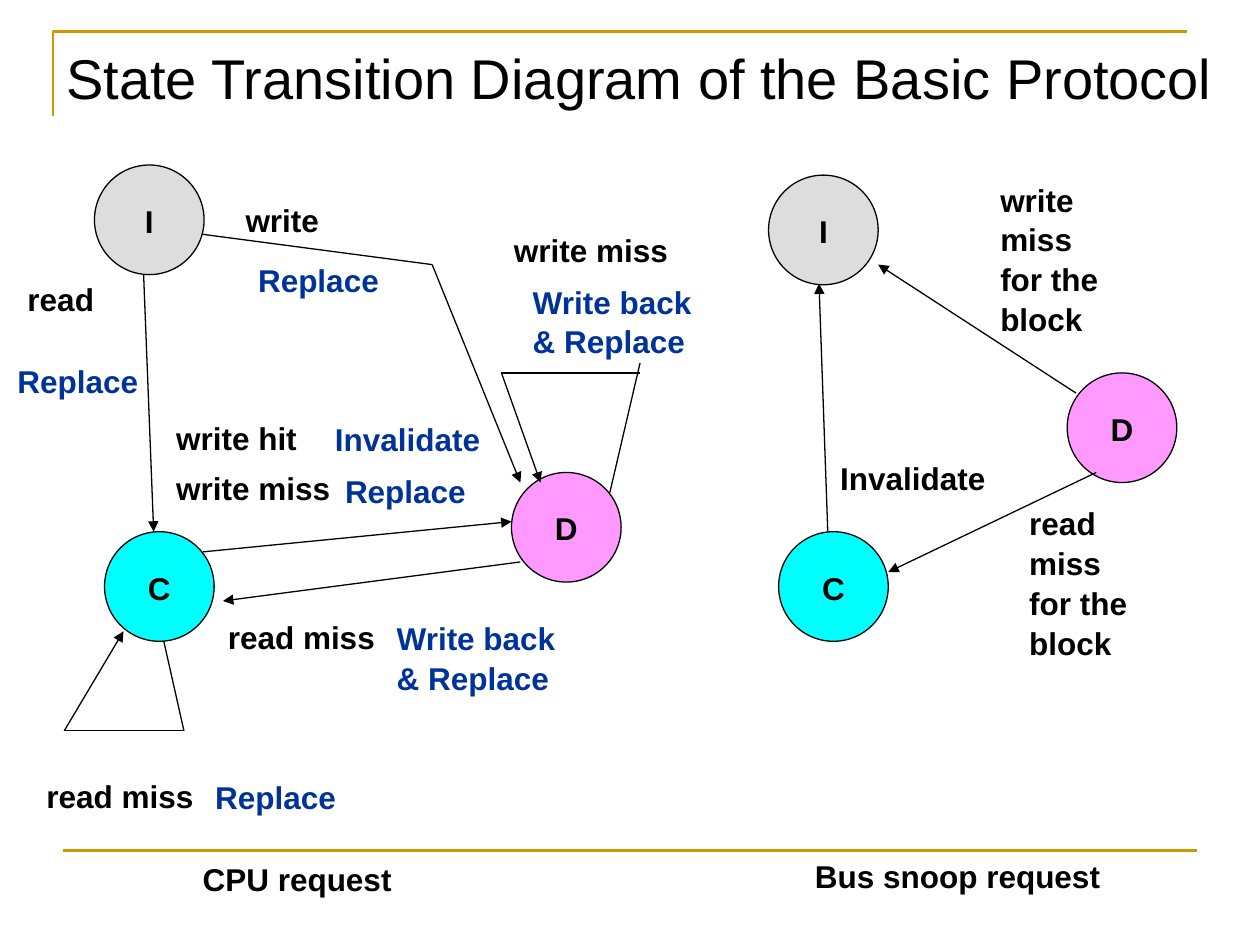
from dataclasses import dataclass
from lxml.etree import SubElement
from pptx import Presentation
from pptx.dml.color import RGBColor
from pptx.enum.shapes import MSO_CONNECTOR, MSO_SHAPE
from pptx.enum.text import MSO_ANCHOR, PP_ALIGN
from pptx.oxml.ns import qn
from pptx.util import Inches, Pt


@dataclass(frozen=True)
class Theme:
    font: str = "Arial"
    ink: str = "000000"
    blue: str = "003399"
    gold: str = "CC9900"
    gray: str = "DDDDDD"
    cyan: str = "00FFFF"
    pink: str = "FF99FF"
    title: int = 32
    body: int = 18
    thin: float = 0.75
    rule: float = 1.5
    pitch: float = 1.05


THEME = Theme()
SIZE = 0.87  # diameter of a state


def style(frame, color, size, bold):
    for para in frame.paragraphs:
        para.line_spacing = THEME.pitch
        for run in para.runs:
            font = run.font
            font.name, font.size, font.bold = THEME.font, Pt(size), bold
            font.color.rgb = RGBColor.from_string(color)


def label(slide, text, left, top, width, color=THEME.ink, rows=1,
          wrap=False, size=THEME.body, bold=True):
    high = 0.1 + rows * size / 60
    box = slide.shapes.add_textbox(
        Inches(left), Inches(top), Inches(width), Inches(high))
    frame = box.text_frame
    frame.word_wrap = wrap
    frame.text = text
    style(frame, color, size, bold)


def state(slide, name, left, top, fill):
    disc = slide.shapes.add_shape(
        MSO_SHAPE.OVAL, Inches(left), Inches(top), Inches(SIZE), Inches(SIZE))
    disc.shadow.inherit = False
    disc.fill.solid()
    disc.fill.fore_color.rgb = RGBColor.from_string(fill)
    disc.line.color.rgb = RGBColor.from_string(THEME.ink)
    disc.line.width = Pt(THEME.thin)
    frame = disc.text_frame
    frame.word_wrap = False
    frame.vertical_anchor = MSO_ANCHOR.MIDDLE
    frame.text = name
    frame.paragraphs[0].alignment = PP_ALIGN.CENTER
    style(frame, THEME.ink, THEME.body, True)


def line(slide, start, end, color=THEME.ink, width=THEME.thin, arrow=False):
    link = slide.shapes.add_connector(
        MSO_CONNECTOR.STRAIGHT, *map(Inches, start + end))
    link.line.color.rgb = RGBColor.from_string(color)
    link.line.width = Pt(width)
    if arrow:
        SubElement(link.line._get_or_add_ln(), qn("a:tailEnd"), type="triangle")
    SubElement(link._element.spPr, qn("a:effectLst"))


def route(slide, *points):
    """Join the points with lines; the last one carries the arrowhead."""
    last = len(points) - 2
    for i, (start, end) in enumerate(zip(points, points[1:])):
        line(slide, start, end, arrow=i == last)


def frame_lines(slide):
    pen = slide.shapes.build_freeform(
        Inches(0.42), Inches(0.92), scale=1.0)
    pen.add_line_segments(
        [(Inches(0.42), Inches(0.25)), (Inches(9.42), Inches(0.25))], close=False)
    edge = pen.convert_to_shape()
    edge.shadow.inherit = False
    edge.fill.background()
    edge.line.color.rgb = RGBColor.from_string(THEME.gold)
    edge.line.width = Pt(THEME.rule)
    line(slide, (0.5, 6.75), (9.5, 6.75), THEME.gold, THEME.rule)


def cpu_side(slide):
    state(slide, "I", 0.75, 1.31, THEME.gray)
    state(slide, "C", 0.83, 4.22, THEME.cyan)
    state(slide, "D", 4.06, 3.75, THEME.pink)

    # Moves between states
    route(slide, (1.14, 2.18), (1.22, 4.22))
    route(slide, (1.61, 4.38), (4.06, 4.14))
    route(slide, (4.13, 4.46), (1.77, 4.77))
    route(slide, (1.61, 1.86), (3.43, 2.1), (4.13, 3.83))

    # Loops back to C and to D
    route(slide, (1.3, 5.09), (1.46, 5.8), (0.51, 5.8), (0.98, 5.01))
    line(slide, (4.84, 3.91), (5.08, 2.88))
    route(slide, (5.08, 2.96), (3.98, 2.96), (4.29, 3.83))

    # Requests
    for text, left, top, width in (
            ("read", 0.12, 2.16, 0.73),
            ("write", 1.85, 1.53, 1.02),
            ("write hit", 1.3, 3.26, 1.16),
            ("write miss", 1.3, 3.66, 1.42),
            ("write miss", 3.98, 1.77, 1.42),
            ("read miss", 1.71, 4.84, 1.37),
            ("read miss", 0.27, 6.1, 1.37),
            ("CPU request", 1.51, 6.76, 1.7)):
        label(slide, text, left, top, width)

    # Actions
    for left, top in ((0.04, 2.81), (2.64, 3.68), (1.61, 6.11), (1.95, 2.01)):
        label(slide, "Replace", left, top, 1.16, THEME.blue)
    label(slide, "Invalidate", 2.56, 3.27, 1.35, THEME.blue)
    for left, top in ((3.05, 4.85), (4.13, 2.18)):
        label(slide, "Write back\n& Replace", left, top, 1.47, THEME.blue, rows=2)


def bus_side(slide):
    state(slide, "I", 6.1, 1.39, THEME.gray)
    state(slide, "C", 6.18, 4.22, THEME.cyan)
    state(slide, "D", 8.47, 2.96, THEME.pink)

    # Moves between states
    route(slide, (6.57, 4.22), (6.5, 2.25))
    route(slide, (8.54, 3.12), (6.97, 2.1))
    route(slide, (8.7, 3.75), (7.05, 4.54))

    # Requests
    label(slide, "Invalidate", 6.57, 3.58, 1.49)
    for text, left, top in (("write miss for the block", 7.84, 1.37),
                            ("read miss for the block", 8.07, 3.94)):
        label(slide, text, left, top, 1.02, rows=4, wrap=True)
    label(slide, "Bus snoop request", 6.37, 6.74, 2.47)


def main():
    deck = Presentation()
    deck.slide_width, deck.slide_height = Inches(10), Inches(7.5)
    slide = deck.slides.add_slide(deck.slide_layouts[6])
    frame_lines(slide)
    cpu_side(slide)
    bus_side(slide)
    label(slide, "State Transition Diagram of the Basic Protocol",
          0.43, 0.27, 9.3, size=THEME.title, bold=False)
    deck.save("out.pptx")


if __name__ == "__main__":
    main()
